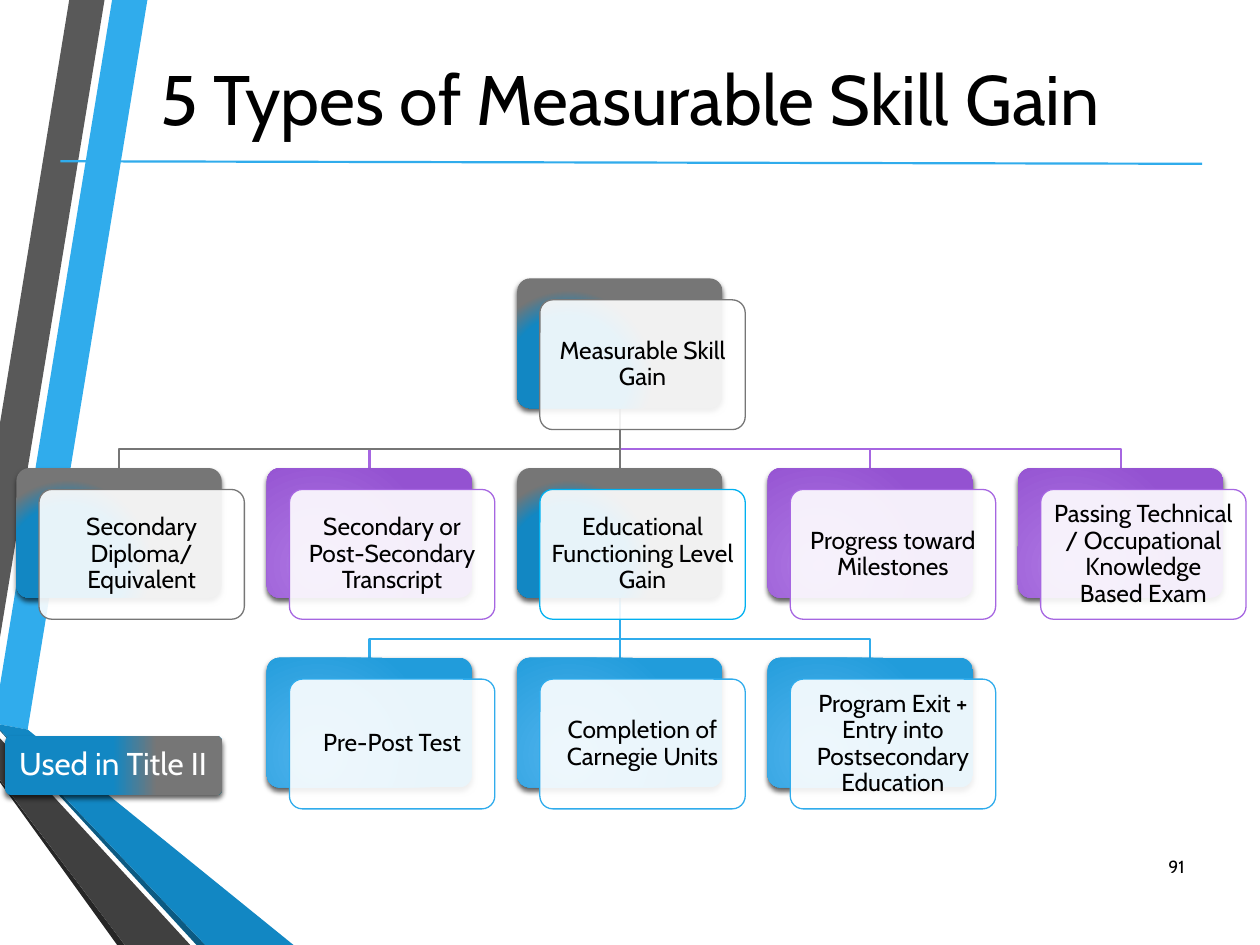
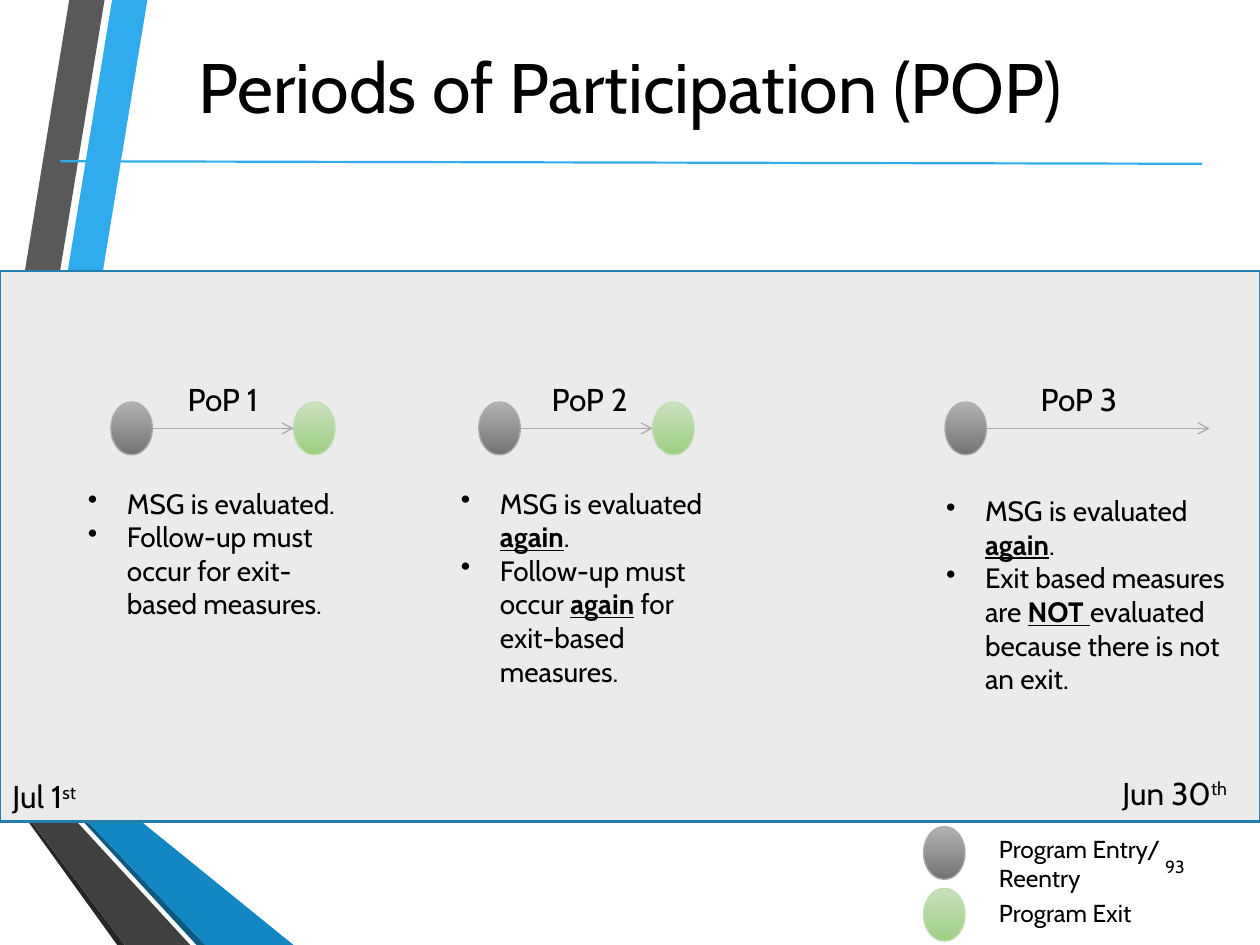
"""Build two slides on measurable skill gains and periods of participation."""
from lxml import etree
from pptx import Presentation
from pptx.dml.color import RGBColor
from pptx.enum.shapes import MSO_CONNECTOR, MSO_SHAPE
from pptx.enum.text import MSO_ANCHOR, MSO_AUTO_SIZE, PP_ALIGN
from pptx.oxml.ns import qn
from pptx.util import Inches, Pt

STRAIGHT = MSO_CONNECTOR.STRAIGHT
ROUNDED, RECTANGLE, OVAL = MSO_SHAPE.ROUNDED_RECTANGLE, MSO_SHAPE.RECTANGLE, MSO_SHAPE.OVAL
TOP, MIDDLE = MSO_ANCHOR.TOP, MSO_ANCHOR.MIDDLE
LEFT, CENTER, RIGHT = PP_ALIGN.LEFT, PP_ALIGN.CENTER, PP_ALIGN.RIGHT
GROW = MSO_AUTO_SIZE.SHAPE_TO_FIT_TEXT

FONT = "Cabin"
BLACK = RGBColor(0x00, 0x00, 0x00)
WHITE = RGBColor(0xFF, 0xFF, 0xFF)
SKY = RGBColor(0x30, 0xAC, 0xEC)
SKY_LIGHT = RGBColor(0x51, 0xB3, 0xED)
SKY_DARK = RGBColor(0x21, 0x9C, 0xDB)
CYAN = RGBColor(0x00, 0xB0, 0xF0)
BLUE = RGBColor(0x12, 0x87, 0xC3)
NAVY = RGBColor(0x0C, 0x5A, 0x82)
PURPLE = RGBColor(0xA6, 0x66, 0xE1)
PURPLE_LIGHT = RGBColor(0xAE, 0x78, 0xE3)
PURPLE_DARK = RGBColor(0x94, 0x52, 0xD1)
GRAY = RGBColor(0x76, 0x76, 0x76)
SLATE = RGBColor(0x59, 0x59, 0x59)
CHARCOAL = RGBColor(0x40, 0x40, 0x40)
INK = RGBColor(0x26, 0x26, 0x26)
PANEL = RGBColor(0xEB, 0xEB, 0xEB)
PANEL_EDGE = RGBColor(0x24, 0x7F, 0xAF)
SILVER = RGBColor(0xAB, 0xAB, 0xAB)
SILVER_LIGHT = RGBColor(0xB2, 0xB2, 0xB2)
SILVER_DARK = RGBColor(0x73, 0x73, 0x73)
GREEN_EDGE = RGBColor(0xC0, 0xDE, 0xB3)
GREEN_LIGHT = RGBColor(0xC9, 0xE2, 0xBE)
GREEN_DARK = RGBColor(0x9E, 0xCE, 0x83)

TITLE_TWO = [(0, BLUE), (50, BLUE), (70, GRAY), (100, GRAY)]
PURPLE_FADE = [(0, PURPLE_LIGHT), (100, PURPLE_DARK)]
SKY_FADE = [(0, SKY_LIGHT), (100, SKY_DARK)]
ENTRY = ([(0, SILVER_LIGHT), (100, SILVER_DARK)], SILVER)
EXIT = ([(0, GREEN_LIGHT), (100, GREEN_DARK)], GREEN_EDGE)

RIBBONS = [
    (SKY, [(0, 5.44), (0, 5.75), (0.22, 5.79), (1.17, 0), (0.89, 0)]),
    (SLATE, [(0.83, 0), (0.55, 0), (0, 3.36), (0, 5.06)]),
    (INK, [(0, 6.19), (0, 6.21), (0.93, 7.5), (0.99, 7.5)]),
    (NAVY, [(0, 5.79), (0, 5.8), (1.56, 7.5), (1.63, 7.5)]),
    (BLUE, [(0, 5.79), (1.63, 7.5), (2.33, 7.5), (0.22, 5.79), (0, 5.75)]),
    (CHARCOAL, [(0, 6.19), (0.99, 7.5), (1.51, 7.5), (0, 5.86)]),
]

TILE_W, TILE_H = 1.63, 1.03
CARDS = [
    (0, 2, "Measurable Skill Gain", TITLE_TWO, GRAY),
    (1, 0, "Secondary Diploma/ Equivalent", TITLE_TWO, GRAY),
    (1, 1, "Secondary or Post-Secondary Transcript", PURPLE_FADE, PURPLE),
    (1, 2, "Educational Functioning Level Gain", TITLE_TWO, CYAN),
    (1, 3, "Progress toward Milestones", PURPLE_FADE, PURPLE),
    (1, 4, "Passing Technical / Occupational Knowledge Based Exam", PURPLE_FADE, PURPLE),
    (2, 1, "Pre-Post Test", SKY_FADE, SKY),
    (2, 2, "Completion of Carnegie Units", SKY_FADE, SKY),
    (2, 3, "Program Exit + Entry into Postsecondary Education", SKY_FADE, SKY),
]
BRANCHES = [
    (1, 4, PURPLE), (1, 3, PURPLE), (2, 3, SKY), (2, 2, SKY),
    (2, 1, SKY), (1, 2, GRAY), (1, 1, PURPLE), (1, 0, GRAY),
]

DOT_W, DOT_H, DOT_TOP = 0.33, 0.42, 3.19
PERIODS = [
    ("PoP 1", 0.88, 2.33, True, (1.39, 1.1), (0.6, 3.81, 2.17, 1.45),
     ["MSG is evaluated.", "Follow-up must occur for exit-based measures."]),
    ("PoP 2", 3.8, 5.18, True, (4.28, 1.07), (3.56, 3.81, 2.36, 1.99),
     ["MSG is evaluated *again*.", "Follow-up must occur *again* for exit-based measures."]),
    ("PoP 3", 7.5, 9.6, False, (8.16, 0.89), (7.41, 3.87, 2.59, 1.72),
     ["MSG is evaluated *again*.",
      "Exit based measures are *NOT *evaluated because there is not an exit."]),
]


def add_xml(parent, tag, **values):
    """Append a drawing element with the given attributes."""
    return etree.SubElement(parent, qn(tag), {key: str(value) for key, value in values.items()})


def apply(target, values):
    """Set every attribute in a dict of format values."""
    for name, value in values.items():
        setattr(target, name, value)


def write(frame, paragraphs, size, color=BLACK, align=LEFT, bullet=False, superscript=False):
    """Fill a text frame; spans between asterisks are emphasised or raised."""
    for index, text in enumerate(paragraphs):
        para = frame.paragraphs[0] if index == 0 else frame.add_paragraph()
        para.alignment = align
        if bullet:
            props = para._p.get_or_add_pPr()
            props.set("marL", str(Inches(0.31)))
            props.set("indent", str(-Inches(0.31)))
            add_xml(props, "a:buChar", char="•")
        for part, words in enumerate(text.split("*")):
            span = para.add_run()
            span.text = words
            style = {"name": FONT, "size": Pt(size)}
            if part % 2 and superscript:
                span._r.get_or_add_rPr().set("baseline", "30000")
            elif part % 2:
                style.update(bold=True, underline=True)
            apply(span.font, style)
            span.font.color.rgb = color


def add_text(page, area, paragraphs, size, **options):
    """Add a wrapped text box that grows with its text."""
    box = page.shapes.add_textbox(*map(Inches, area))
    apply(box.text_frame, {"word_wrap": True, "auto_size": GROW})
    write(box.text_frame, paragraphs, size, **options)
    return box


def set_line(shape, color, width):
    """Give a shape a solid outline, or none."""
    if color is None:
        shape.line.fill.background()
    else:
        shape.line.color.rgb = color
        shape.line.width = Pt(width)


def add_box(page, kind, area, fill=None, line=None, width=0.75):
    """Add a preset shape without a shadow."""
    box = page.shapes.add_shape(kind, *map(Inches, area))
    box.shadow.inherit = False
    if kind == ROUNDED:
        box.adjustments[0] = 0.1
    if fill is not None:
        box.fill.solid()
        box.fill.fore_color.rgb = fill
    set_line(box, line, width)
    return box


def set_gradient(shape, stops, angle=None):
    """Fill a shape with a linear gradient, or a radial one when no angle is given."""
    gradient = etree.Element(qn("a:gradFill"), {"rotWithShape": "1"})
    stop_list = add_xml(gradient, "a:gsLst")
    for position, color in stops:
        add_xml(add_xml(stop_list, "a:gs", pos=position * 1000), "a:srgbClr", val=color)
    if angle is None:
        radial = add_xml(gradient, "a:path", path="circle")
        add_xml(radial, "a:fillToRect", l=50000, t=100000, r=100000, b=50000)
    else:
        add_xml(gradient, "a:lin", ang=angle * 60000, scaled=0)
    shape.element.spPr.find(qn("a:prstGeom")).addnext(gradient)


def add_tile(page, area, stops, angle=None):
    """Add a rounded gradient tile with a soft shadow below it."""
    tile = add_box(page, ROUNDED, area)
    set_gradient(tile, stops, angle)
    shadow = add_xml(tile.element.spPr.find(qn("a:effectLst")), "a:outerShdw",
                     blurRad=Pt(3), dist=Pt(2), dir=5400000, algn="ctr", rotWithShape=0)
    add_xml(add_xml(shadow, "a:srgbClr", val="000000"), "a:alpha", val=64000)
    return tile


def add_outline(page, points, fill=None, line=None):
    """Draw a closed filled outline or an open stroke."""
    corners = [(Inches(x), Inches(y)) for x, y in points]
    builder = page.shapes.build_freeform(*corners[0])
    builder.add_line_segments(corners[1:], close=fill is not None)
    shape = builder.convert_to_shape()
    shape.shadow.inherit = False
    if fill is None:
        shape.fill.background()
    else:
        shape.fill.solid()
        shape.fill.fore_color.rgb = fill
    set_line(shape, line, 1.25)


def add_line(page, start, end, color, width=1.25, arrow=False):
    """Add a straight line, with an arrowhead at its end if wanted."""
    line = page.shapes.add_connector(STRAIGHT, *map(Inches, (*start, *end)))
    set_line(line, color, width)
    if arrow:
        add_xml(line.line._get_or_add_ln(), "a:tailEnd", type="arrow")
    add_xml(line._element.spPr, "a:effectLst")
    return line


def add_page(deck, title, title_top, title_height, number):
    """Add a page with its title, ribbons, page number and rule."""
    page = deck.slides.add_slide(deck.slide_layouts[5])
    for color, points in RIBBONS:
        add_outline(page, points, fill=color)
    heading = page.shapes.title
    apply(heading, {"left": 0, "top": Inches(title_top),
                    "width": Inches(10), "height": Inches(title_height)})
    heading.text_frame.vertical_anchor = MIDDLE
    write(heading.text_frame, [title], 40, align=CENTER)
    box = add_text(page, (9.03, 6.68, 0.47, 0.4), [number], 10, align=RIGHT)
    apply(box.text_frame, {"vertical_anchor": MIDDLE, "auto_size": MSO_AUTO_SIZE.NONE})
    add_line(page, (0.48, 1.28), (9.54, 1.3), SKY)
    return page


def tile_place(row, column):
    """Return the left and top of a tile in the chart grid."""
    return 0.13 + 7.95 * column / 4, 2.21 + 3.01 * row / 2


def add_branch(page, row, column, color):
    """Draw the branch from the middle tile above to a tile; return it if straight."""
    left, end = tile_place(row, column)
    parent_left, parent_top = tile_place(row - 1, 2)
    x, parent_x = left + TILE_W / 2, parent_left + TILE_W / 2
    start = parent_top + TILE_H
    if column == 2:
        return add_line(page, (x, start), (x, end), color)
    bend = end - 0.15
    add_outline(page, [(parent_x, start), (parent_x, bend), (x, bend), (x, end)], line=color)
    return None


def add_card(page, row, column, text, stops, edge):
    """Add a tile with its translucent label card; return the tile."""
    left, top = tile_place(row, column)
    tile = add_tile(page, (left, top, TILE_W, TILE_H), stops)
    card = add_box(page, ROUNDED, (left + 0.18, top + 0.17, TILE_W, TILE_H), WHITE, edge)
    add_xml(card.element.spPr.find(qn("a:solidFill"))[0], "a:alpha", val=90000)
    margins = dict.fromkeys(["margin_left", "margin_top", "margin_right", "margin_bottom"],
                            Inches(0.06))
    apply(card.text_frame, {"word_wrap": True, "vertical_anchor": MIDDLE, **margins})
    write(card.text_frame, [text], 14, align=CENTER)
    card.text_frame.paragraphs[0].line_spacing = 0.9
    return tile


def add_dot(page, left, top, look):
    """Add an entry or exit marker."""
    stops, edge = look
    set_gradient(add_box(page, OVAL, (left, top, DOT_W, DOT_H), line=edge), stops, 90)


def build_gain_types(deck):
    """Build the tree of skill gain types."""
    page = add_page(deck, "5 Types of Measurable Skill Gain", 0, 1.55, "91")
    branches = {(row, column): add_branch(page, row, column, color)
                for row, column, color in BRANCHES}
    tiles = {card[:2]: add_card(page, *card) for card in CARDS}
    for row in (1, 2):
        branches[row, 2].begin_connect(tiles[row - 1, 2], 2)
        branches[row, 2].end_connect(tiles[row, 2], 0)
    key = add_tile(page, (0.04, 5.84, 1.72, 0.47), TITLE_TWO, angle=0)
    apply(key.text_frame, {"word_wrap": True, "vertical_anchor": TOP})
    write(key.text_frame, ["Used in Title II"], 18, color=WHITE)


def build_periods(deck):
    """Build the timeline of participation periods."""
    page = add_page(deck, "Periods of Participation (POP)", 0.05, 1.25, "93")
    add_box(page, RECTANGLE, (0, 2.15, 10, 4.37), PANEL, PANEL_EDGE, 1.25)
    add_text(page, (0, 6.12, 0.85, 0.4), ["Jul 1*st*"], 18, superscript=True)
    add_text(page, (8.81, 6.09, 1.19, 0.4), ["Jun 30*th*"], 18, superscript=True)
    for look, top, label, label_top, height in [
            (ENTRY, 6.56, "Program Entry/ Reentry", 6.57, 0.57),
            (EXIT, 7.05, "Program Exit", 7.08, 0.34)]:
        add_dot(page, 7.33, top, look)
        add_text(page, (7.83, label_top, 1.96, height), [label], 14)
    middle = DOT_TOP + DOT_H / 2
    for name, start, end, exits, (label_left, label_width), notes_area, notes in PERIODS:
        add_dot(page, start, DOT_TOP, ENTRY)
        if exits:
            add_dot(page, end, DOT_TOP, EXIT)
        add_line(page, (start + DOT_W, middle), (end, middle), SILVER, 0.75, arrow=True)
        add_text(page, (label_left, 2.97, label_width, 0.4), [name], 18)
        add_text(page, notes_area, notes, 16, bullet=True)


def main():
    """Create and save the deck."""
    deck = Presentation()
    deck.slide_width, deck.slide_height = Inches(10), Inches(7.5)
    build_gain_types(deck)
    build_periods(deck)
    deck.save("out.pptx")


if __name__ == "__main__":
    main()
